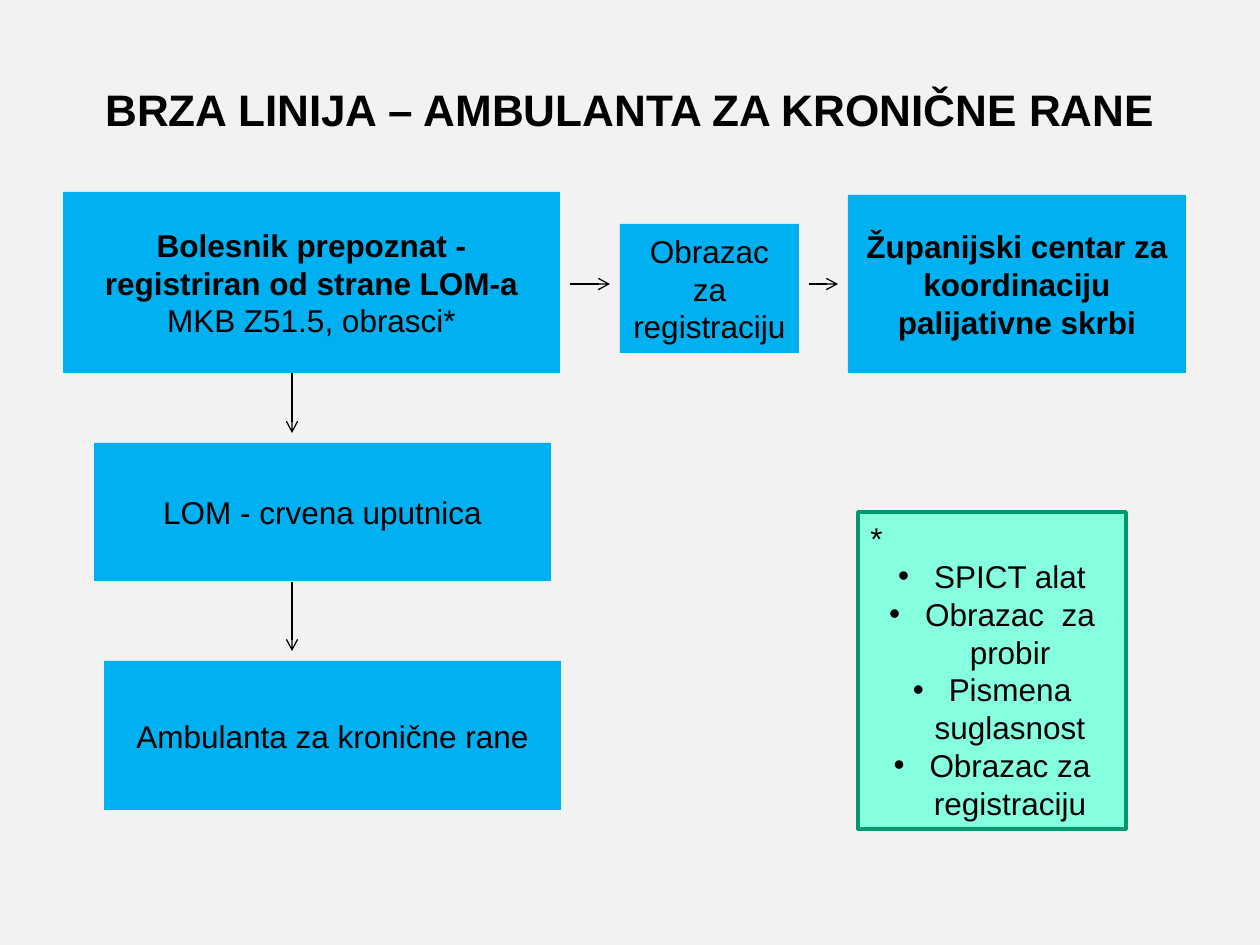
import pptx
import pptx.util
import pptx.dml.color
import pptx.enum.shapes
import pptx.enum.text
import pptx.oxml.ns
import lxml.etree

EMU_PER_PX = 914400 / 126
COLORS = {
    "background": "F2F2F2",
    "step": "00B0F0",
    "note": "85FFE0",
    "note_border": "009771",
    "text": "000000",
}
ALIGN = pptx.enum.text.PP_ALIGN
BODY = {"name": "Arial", "size": pptx.util.Pt(18), "bold": False}
BOLD = {**BODY, "bold": True}
TITLE = {**BOLD, "size": pptx.util.Pt(25.2)}
CENTERED = {"alignment": ALIGN.CENTER}
BULLET_INDENT = 36

STEPS = [
    ((63, 192, 497, 181), [
        ("Bolesnik prepoznat - registriran od strane LOM-a", BOLD),
        ("MKB Z51.5, obrasci*", BODY),
    ]),
    ((94, 443, 457, 138), [("LOM - crvena uputnica", BODY)]),
    ((104, 661, 457, 149), [("Ambulanta za kronične rane", BODY)]),
    ((848, 195, 338, 178), [
        ("Županijski centar za koordinaciju palijativne skrbi", BOLD),
    ]),
    ((620, 224, 179, 129), [("Obrazac za registraciju", BODY)]),
]
NOTE_ITEMS = [
    "SPICT alat",
    "Obrazac  za probir",
    "Pismena suglasnost",
    "Obrazac za registraciju",
]
ARROWS = [
    (292, 373, 292, 433),
    (292, 582, 292, 651),
    (570, 284, 610, 284),
    (809, 284, 838, 284),
]


def px(value):
    return pptx.util.Emu(round(value * EMU_PER_PX))


def color(name):
    return pptx.dml.color.RGBColor.from_string(COLORS[name])


def apply_format(target, values):
    for name, value in values.items():
        setattr(target, name, value)


def add_child(parent, tag, **attributes):
    return lxml.etree.SubElement(parent, pptx.oxml.ns.qn(tag), attributes)


def write_paragraph(paragraph, text, font_format, paragraph_format):
    apply_format(paragraph, paragraph_format)
    run = paragraph.add_run()
    run.text = text
    apply_format(run.font, font_format)
    run.font.color.rgb = color("text")


def write_text(shape, lines, paragraph_format):
    frame = shape.text_frame
    apply_format(frame, {
        "word_wrap": True,
        "vertical_anchor": pptx.enum.text.MSO_ANCHOR.MIDDLE,
    })
    for index, (text, font_format) in enumerate(lines):
        paragraph = frame.add_paragraph() if index else frame.paragraphs[0]
        write_paragraph(paragraph, text, font_format, paragraph_format)


def add_title(slide, box, text):
    shape = slide.shapes.add_textbox(*map(px, box))
    margins = ("margin_left", "margin_top", "margin_right", "margin_bottom")
    apply_format(shape.text_frame, dict.fromkeys(margins, 0))
    write_text(shape, [(text, TITLE)], {**CENTERED, "line_spacing": 0.93})


def add_box(slide, box, fill):
    shape = slide.shapes.add_shape(
        pptx.enum.shapes.MSO_SHAPE.RECTANGLE, *map(px, box))
    shape.shadow.inherit = False
    shape.fill.solid()
    shape.fill.fore_color.rgb = color(fill)
    shape.line.fill.background()
    return shape


def add_bullet(paragraph):
    properties = paragraph._p.get_or_add_pPr()
    properties.set("marL", str(px(BULLET_INDENT)))
    properties.set("indent", str(-px(BULLET_INDENT)))
    add_child(properties, "a:buFont", typeface="Arial")
    add_child(properties, "a:buChar", char="•")


def add_note(slide, box, marker, items):
    shape = add_box(slide, box, "note")
    shape.line.color.rgb = color("note_border")
    shape.line.width = pptx.util.Pt(2)
    lines = [(text, BODY) for text in [marker, *items]]
    write_text(shape, lines, CENTERED)
    marker_paragraph, *item_paragraphs = shape.text_frame.paragraphs
    marker_paragraph.alignment = ALIGN.LEFT
    for paragraph in item_paragraphs:
        add_bullet(paragraph)


def add_arrow(slide, ends):
    connector = slide.shapes.add_connector(
        pptx.enum.shapes.MSO_CONNECTOR.STRAIGHT, *map(px, ends))
    connector.line.color.rgb = color("text")
    connector.line.width = pptx.util.Pt(0.75)
    add_child(connector.line._get_or_add_ln(), "a:tailEnd", type="arrow")
    add_child(connector._element.spPr, "a:effectLst")


def main():
    presentation = pptx.Presentation()
    presentation.slide_width = px(1260)
    presentation.slide_height = px(945)
    slide = presentation.slides.add_slide(presentation.slide_layouts[6])
    slide.background.fill.solid()
    slide.background.fill.fore_color.rgb = color("background")

    add_title(slide, (63, 73, 1134, 77),
              "BRZA LINIJA – AMBULANTA ZA KRONIČNE RANE")
    for box, lines in STEPS:
        write_text(add_box(slide, box, "step"), lines, CENTERED)
    add_note(slide, (858, 512, 268, 317), "*", NOTE_ITEMS)
    for ends in ARROWS:
        add_arrow(slide, ends)

    presentation.save("out.pptx")


if __name__ == "__main__":
    main()
